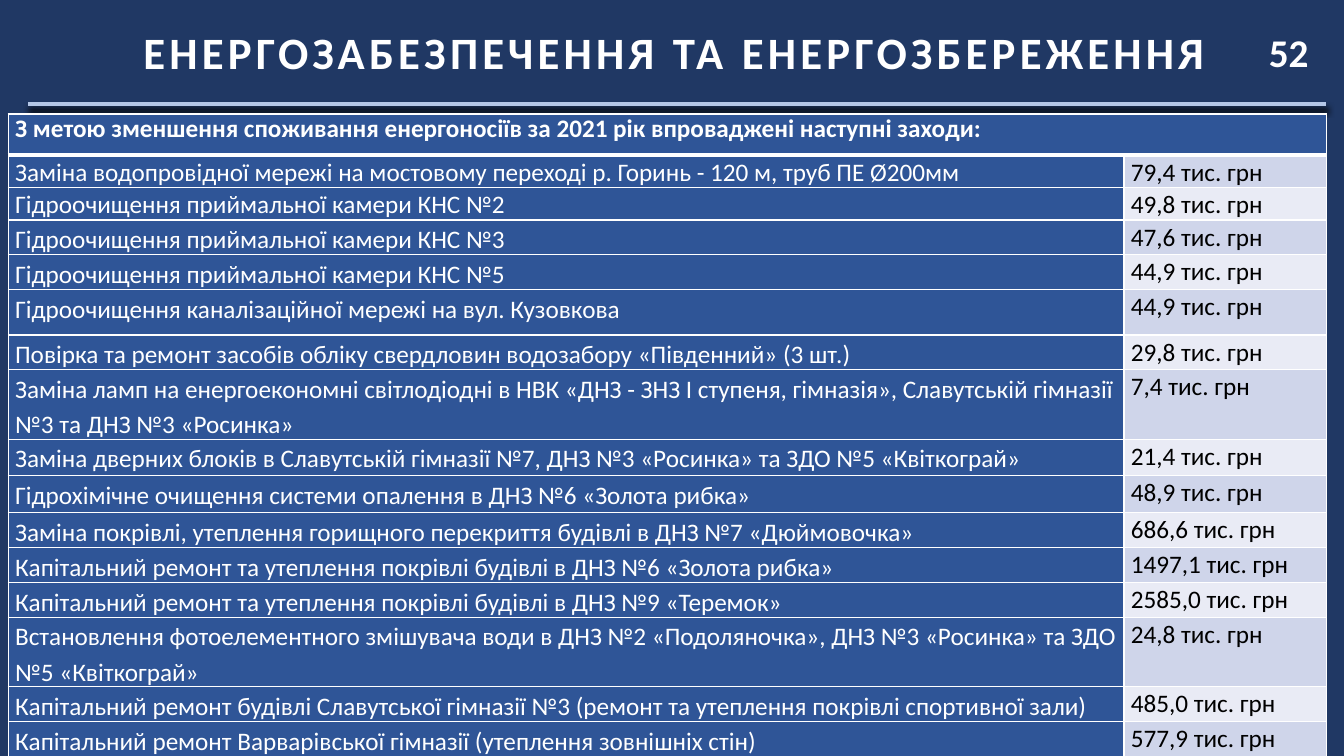
import pptx
import pptx.dml.color
import pptx.enum.shapes
import pptx.enum.text
import pptx.oxml
import pptx.oxml.ns
import pptx.util

Pt = pptx.util.Pt
Color = pptx.dml.color.RGBColor.from_string
DRAWING = pptx.oxml.ns.nsdecls("a")

THEME = {
    "font": "Calibri",
    "background": "203864",
    "rule": "B4C7E7",
    "label": "2F5597",
    "bands": ["CFD5EA", "E9EBF5"],
    "light": "FFFFFF",
    "dark": "000000",
    "title_size": 32,
    "number_size": 28,
    "table_size": 18,
}
HEADING = "З метою зменшення споживання енергоносіїв за 2021 рік впроваджені наступні заходи:"
# Measure, cost in thousand hryvnias, least row height
MEASURES = [
    ("Заміна водопровідної мережі на мостовому переході р. Горинь - 120 м, труб ПЕ Ø200мм", "79,4", 0),
    ("Гідроочищення приймальної камери КНС №2", "49,8", 21.6),
    ("Гідроочищення приймальної камери КНС №3", "47,6", 16.5),
    ("Гідроочищення приймальної камери КНС №5", "44,9", 15),
    ("Гідроочищення каналізаційної мережі на вул. Кузовкова", "44,9", 32.4),
    ("Повірка та ремонт засобів обліку свердловин водозабору «Південний» (3 шт.)", "29,8", 22.3),
    ("Заміна ламп на енергоекономні світлодіодні в НВК «ДНЗ - ЗНЗ І ступеня, гімназія», "
     "Славутській гімназії №3 та ДНЗ №3 «Росинка»", "7,4", 13.7),
    ("Заміна дверних блоків в Славутській гімназії №7, ДНЗ №3 «Росинка» та ЗДО №5 «Квіткограй»", "21,4", 25.9),
    ("Гідрохімічне очищення системи опалення в ДНЗ №6 «Золота рибка»", "48,9", 26.6),
    ("Заміна покрівлі, утеплення горищного перекриття будівлі в ДНЗ №7 «Дюймовочка»", "686,6", 15.8),
    ("Капітальний ремонт та утеплення покрівлі будівлі в ДНЗ №6 «Золота рибка»", "1497,1", 15.8),
    ("Капітальний ремонт та утеплення покрівлі будівлі в ДНЗ №9 «Теремок»", "2585,0", 9.4),
    ("Встановлення фотоелементного змішувача води в ДНЗ №2 «Подоляночка», "
     "ДНЗ №3 «Росинка» та ЗДО №5 «Квіткограй»", "24,8", 9.4),
    ("Капітальний ремонт будівлі Славутської гімназії №3 (ремонт та утеплення покрівлі спортивної зали)",
     "485,0", 9.4),
    ("Капітальний ремонт Варварівської гімназії (утеплення зовнішніх стін)", "577,9", 9.4),
]


def write(frame, text, size, color, bold=False, **layout):
    para = frame.paragraphs[0]
    for name, value in layout.items():
        setattr(para, name, value)
    span = para.add_run()
    span.text = text
    for name, value in {"name": THEME["font"], "size": Pt(size), "bold": bold}.items():
        setattr(span.font, name, value)
    span.font.color.rgb = Color(color)
    return span


def shadow(opacity):
    return pptx.oxml.parse_xml(
        f'<a:effectLst {DRAWING}><a:outerShdw blurRad="{Pt(4)}" dist="{Pt(4)}" dir="5400000">'
        f'<a:srgbClr val="{THEME["dark"]}"><a:alpha val="{opacity * 1000}"/></a:srgbClr>'
        f'</a:outerShdw></a:effectLst>')


# Page
deck = pptx.Presentation()
deck.slide_width, deck.slide_height = Pt(960), Pt(540)
page = deck.slides.add_slide(deck.slide_layouts[6])
page.background.fill.solid()
page.background.fill.fore_color.rgb = Color(THEME["background"])

# Title and page number
title = page.shapes.add_textbox(Pt(-23.8), Pt(10.8), Pt(989.3), Pt(94.3))
number = page.shapes.add_textbox(Pt(899.3), Pt(16.6), Pt(47.5), Pt(41))
for box in (title, number):
    box.text_frame.word_wrap = True
    box.text_frame.auto_size = pptx.enum.text.MSO_AUTO_SIZE.SHAPE_TO_FIT_TEXT
title.text_frame.margin_left = Pt(29)
title.text_frame.margin_top = Pt(6.8)
span = write(title.text_frame, "ЕНЕРГОЗАБЕЗПЕЧЕННЯ ТА ЕНЕРГОЗБЕРЕЖЕННЯ", THEME["title_size"],
             THEME["light"], True, alignment=pptx.enum.text.PP_ALIGN.CENTER)
letters = span._r.get_or_add_rPr()
letters.set("spc", "300")
letters.find(pptx.oxml.ns.qn("a:solidFill")).addnext(shadow(40))
write(number.text_frame, "52", THEME["number_size"], THEME["light"], True)

# Rule under the title
rule = page.shapes.add_connector(pptx.enum.shapes.MSO_CONNECTOR.STRAIGHT,
                                 Pt(20.2), Pt(74.2), Pt(947.5), Pt(74.2))
rule.line.color.rgb = Color(THEME["rule"])
rule.line.width = Pt(3)
rule._element.spPr.append(shadow(100))

# Table of measures
holder = page.shapes.add_table(len(MEASURES) + 1, 2, Pt(5.8), Pt(81.4), Pt(941.8), Pt(441.4))
table = holder.table
table.first_row = table.horz_banding = False
for column, width in zip(table.columns, (797, 144.8)):
    column.width = Pt(width)
for row, height in zip(table.rows, [29.5] + [measure[2] for measure in MEASURES]):
    row.height = Pt(height)
holder.height = Pt(441.4)

# Cell margins, borders and fills
for index, row in enumerate(table.rows):
    for column, cell in enumerate(row.cells):
        margins = {"margin_left": 5, "margin_right": 5, "margin_top": 0, "margin_bottom": 0}
        for name, value in margins.items():
            setattr(cell, name, Pt(value))
        for side in "LRTB":
            heavy = (index, side) in [(0, "B"), (1, "T")]
            cell._tc.get_or_add_tcPr().append(pptx.oxml.parse_xml(
                f'<a:ln{side} {DRAWING} w="{Pt(3 if heavy else 1)}"><a:solidFill>'
                f'<a:srgbClr val="{THEME["light"]}"/></a:solidFill></a:ln{side}>'))
        cell.fill.solid()
        band = THEME["bands"][(index - 1) % 2]
        cell.fill.fore_color.rgb = Color(band if column and index else THEME["label"])

# Table text
table.cell(0, 0).merge(table.cell(0, 1))
write(table.cell(0, 0).text_frame, HEADING, THEME["table_size"], THEME["light"], True)
tight = {"line_spacing": 1.07, "space_after": Pt(8)}
loose = {"line_spacing": 1.15, "space_after": Pt(10)}
for index, (measure, cost, height) in enumerate(MEASURES, 1):
    write(table.cell(index, 0).text_frame, measure, THEME["table_size"], THEME["light"],
          **(tight if index < 3 else loose))
    write(table.cell(index, 1).text_frame, f"{cost} тис. грн", THEME["table_size"], THEME["dark"], **tight)

deck.save("out.pptx")
